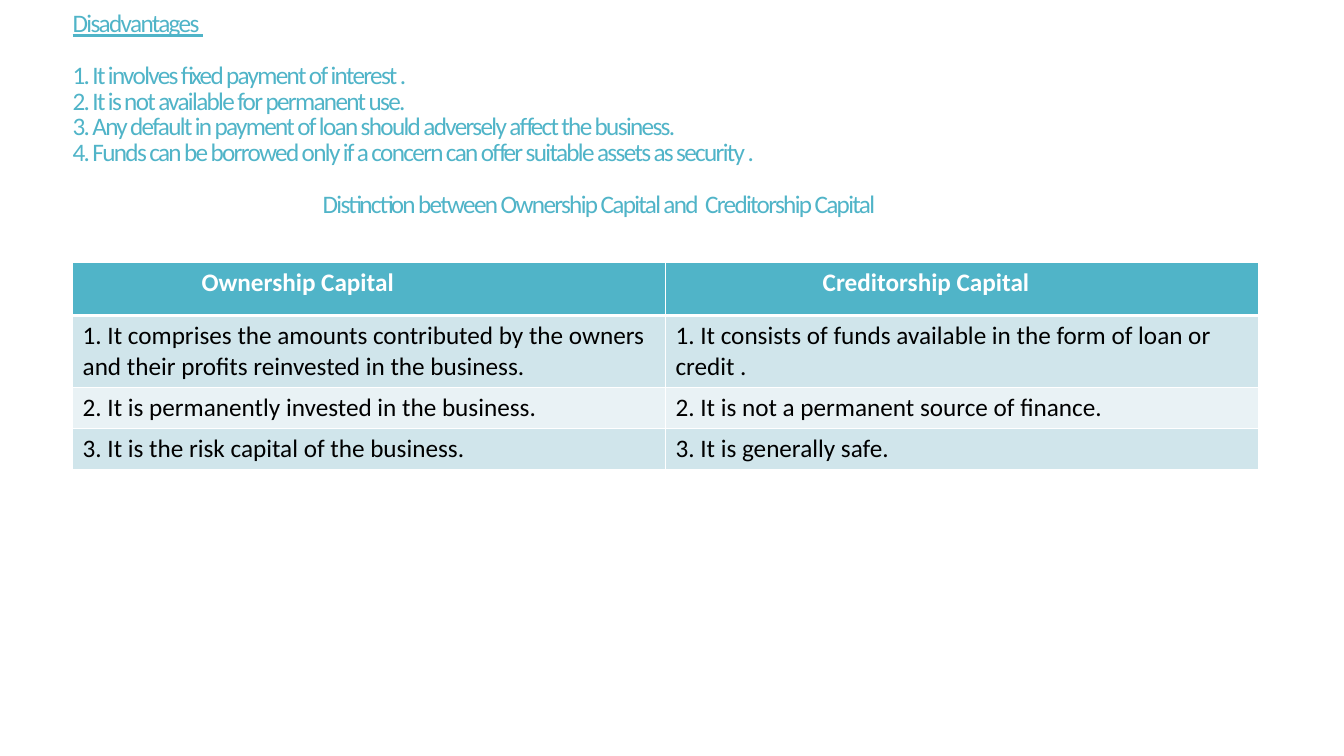
from pptx import Presentation
from pptx.dml.color import RGBColor
from pptx.enum.text import MSO_ANCHOR, MSO_AUTO_SIZE, PP_ALIGN
from pptx.oxml import parse_xml
from pptx.oxml.ns import nsdecls
from pptx.util import Inches, Pt

COLORS = {
    "teal": "50B4C8",
    "band": "D0E5EB",
    "pale": "E9F2F5",
    "white": "FFFFFF",
    "black": "000000",
}

POINTS = [
    "1. It involves fixed payment of interest .",
    "2. It is not available for permanent use.",
    "3. Any default in payment of loan should adversely affect the business.",
    "4. Funds can be borrowed only if a concern can offer suitable assets as security .",
]
TOPIC = "Distinction between Ownership Capital and  Creditorship Capital"

ROWS = [
    ("Ownership Capital", "Creditorship Capital"),
    ("1. It comprises the amounts contributed by the owners and their profits "
     "reinvested in the business.",
     "1. It consists of funds available in the form of loan or credit ."),
    ("2. It is permanently invested in the business.",
     "2. It is not a permanent source of finance."),
    ("3. It is the risk capital of the business.", "3. It is generally safe."),
]
HEIGHTS = [0.53, 0.69, 0.41, 0.41]
INDENTS = [1.28, 1.56]


class Deck:
    """Hold the text style and the current slide."""

    def __init__(self):
        """Open a wide deck with one title slide."""
        self.font, self.size = "Calibri", Pt(18)
        self.prs = Presentation()
        self.prs.slide_width = Inches(13.33)
        self.prs.slide_height = Inches(7.5)
        self.slide = self.prs.slides.add_slide(self.prs.slide_layouts[5])

    def style(self, para, color, bold=False):
        """Format every run of a paragraph."""
        para.alignment = PP_ALIGN.LEFT
        for run in para.runs:
            run.font.name, run.font.size = self.font, self.size
            run.font.bold = bold
            run.font.color.rgb = RGBColor.from_string(COLORS[color])

    def title(self, head, points, topic):
        """Fill the title with a heading, its points and the next topic."""
        box = self.slide.shapes.title
        box.left, box.top = Inches(0.62), Inches(0.12)
        box.width, box.height = Inches(11.78), Inches(6.85)
        frame = box.text_frame
        frame.word_wrap = True
        frame.auto_size = MSO_AUTO_SIZE.NONE
        frame.vertical_anchor = MSO_ANCHOR.TOP
        frame.margin_top = 0
        frame.text = "\n".join([head, *points, topic])
        paras = frame.paragraphs
        for para in paras:
            para.line_spacing = 0.85
            para.space_before = para.space_after = Pt(0)
            self.style(para, "teal")
            for run in para.runs:
                run.font._element.set("spc", "-120")
        paras[0].runs[0].font.underline = True
        for para in (paras[1], paras[-1]):
            para.space_before = Pt(18.5)
        paras[-1]._p.get_or_add_pPr().set("marL", str(Inches(2.48)))

    def border(self, cell, row):
        """Draw white cell edges, thick below the header row."""
        thick = {0: "B", 1: "T"}.get(row)
        for spot, side in enumerate("LRTB"):
            width = Pt(3 if side == thick else 1)
            edge = parse_xml(
                f'<a:ln{side} {nsdecls("a")} w="{width}"><a:solidFill>'
                f'<a:srgbClr val="{COLORS["white"]}"/></a:solidFill></a:ln{side}>')
            cell._tc.get_or_add_tcPr().insert(spot, edge)

    def table(self, rows, heights, indents):
        """Add a banded table with indented headings."""
        grid = self.slide.shapes.add_table(
            len(rows), len(indents), Inches(0.72), Inches(2.6),
            Inches(11.76), Inches(sum(heights))).table
        for row, texts in enumerate(rows):
            grid.rows[row].height = Inches(heights[row])
            head = row == 0
            fill = "teal" if head else "band" if row % 2 else "pale"
            for col, text in enumerate(texts):
                cell = grid.cell(row, col)
                cell.text = text
                cell.fill.solid()
                cell.fill.fore_color.rgb = RGBColor.from_string(COLORS[fill])
                if head:
                    cell.margin_left = Inches(indents[col])
                self.style(cell.text_frame.paragraphs[0],
                           "white" if head else "black", head)
                self.border(cell, row)


def main():
    """Build and save the slide."""
    deck = Deck()
    deck.title("Disadvantages ", POINTS, TOPIC)
    deck.table(ROWS, HEIGHTS, INDENTS)
    deck.prs.save("out.pptx")


if __name__ == "__main__":
    main()
